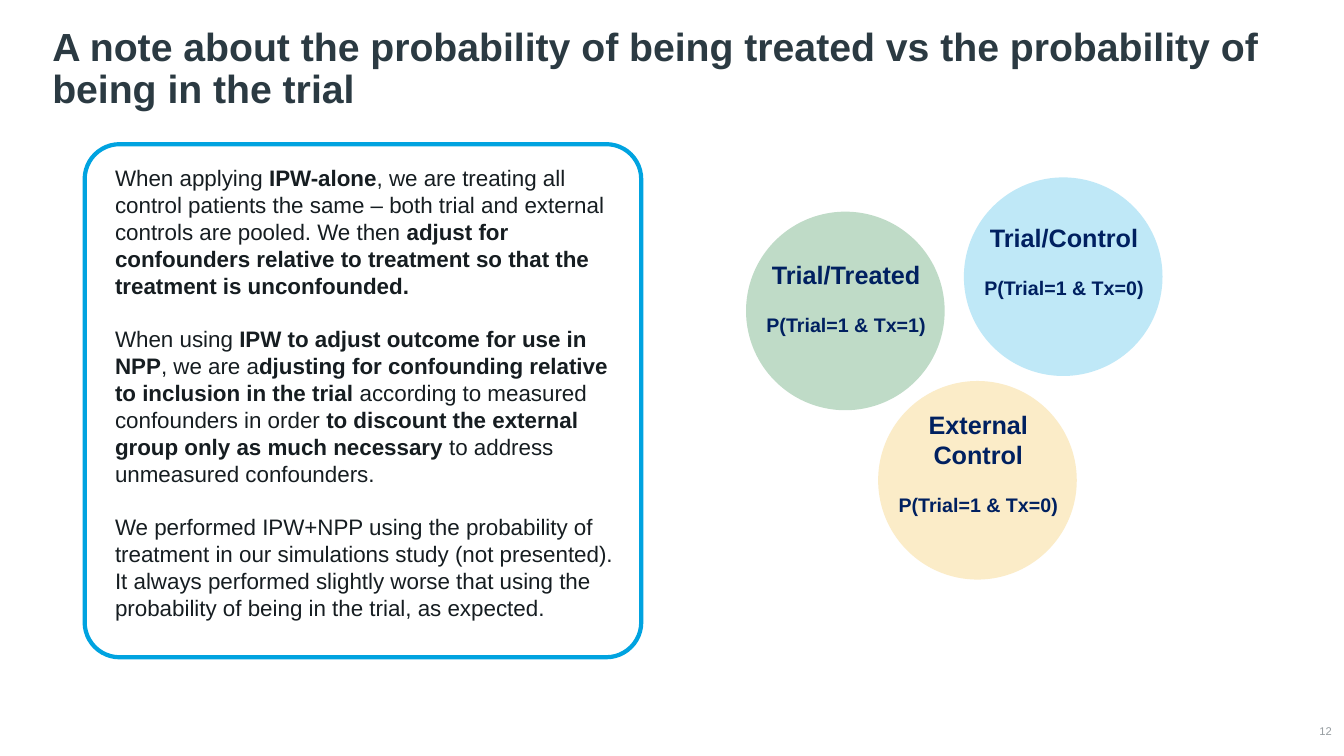
import pptx
import pptx.util
import pptx.dml.color
import pptx.enum.shapes
import pptx.enum.text
import pptx.oxml.ns
from lxml import etree

Inches, Pt = pptx.util.Inches, pptx.util.Pt
RGBColor = pptx.dml.color.RGBColor
SHAPE = pptx.enum.shapes.MSO_SHAPE
ALIGN = pptx.enum.text.PP_ALIGN
ANCHOR = pptx.enum.text.MSO_ANCHOR

SLATE = RGBColor(0x2B, 0x3A, 0x42)
INK = RGBColor(0x16, 0x1D, 0x21)
GREY = RGBColor(0x95, 0x9C, 0xA0)
NAVY = RGBColor(0x00, 0x20, 0x60)
WHITE = RGBColor(0xFF, 0xFF, 0xFF)
BORDER_BLUE = RGBColor(0x00, 0xA3, 0xE0)
GREEN = RGBColor(0x02, 0x71, 0x23)
SKY = RGBColor(0xBF, 0xE8, 0xF7)
CREAM = RGBColor(0xFB, 0xEC, 0xC8)

SLIDE_W, SLIDE_H = Inches(13.33), Inches(7.5)
CIRCLE_W, CIRCLE_H = 14.78, 26.27
LABEL_W, LABEL_H = 12.9, 15.73

# Group name, probability, fill, opacity, circle left and top, label drop
GROUPS = [
    ("Trial/Treated", "P(Trial=1 & Tx=1)", GREEN, 25, 55.51, 28.0, 6.27),
    ("Trial/Control", "P(Trial=1 & Tx=0)", SKY, 100, 71.72, 23.47, 6.0),
    ("External Control", "P(Trial=1 & Tx=0)", CREAM, 100, 65.34, 50.4, 3.73),
]

# Each paragraph alternates regular and bold wording
NOTES = [
    ["When applying ", "IPW-alone",
     ", we are treating all control patients the same – both trial and "
     "external controls are pooled. We then ",
     "adjust for confounders relative to treatment so that the treatment "
     "is unconfounded."],
    ["When using ", "IPW to adjust outcome for use in NPP", ", we are a",
     "djusting for confounding relative to inclusion in the trial ",
     "according to measured confounders in order ",
     "to discount the external group only as much necessary",
     " to address unmeasured confounders."],
    ["We performed IPW+NPP using the probability of treatment in our "
     "simulations study (not presented). It always performed slightly worse "
     "that using the probability of being in the trial, as expected."],
]


def area(left, top, width, height):
    """Turn percentages of the slide into a position and a size."""
    return (int(SLIDE_W * left / 100), int(SLIDE_H * top / 100),
            int(SLIDE_W * width / 100), int(SLIDE_H * height / 100))


def style(run, size, color, bold=False):
    run.font.name = "Arial"
    run.font.size = Pt(size)
    run.font.bold = bold
    run.font.color.rgb = color


def set_frame(frame, insets, anchor=ANCHOR.TOP):
    frame.word_wrap = True
    frame.vertical_anchor = anchor
    (frame.margin_left, frame.margin_top,
     frame.margin_right, frame.margin_bottom) = map(Inches, insets)


def add_line_of_text(frame, pieces, size, color, bolds, align, gap=0):
    """Fill the first paragraph, or append one that follows a gap."""
    paragraph = frame.paragraphs[0]
    if paragraph.runs:
        paragraph = frame.add_paragraph()
        paragraph.space_before = Pt(gap)
    paragraph.alignment = align
    for piece, bold in zip(pieces, bolds):
        run = paragraph.add_run()
        run.text = piece
        style(run, size, color, bold)
    return paragraph


def add_text(slide, place, insets, anchor=ANCHOR.TOP):
    frame = slide.shapes.add_textbox(*area(*place)).text_frame
    set_frame(frame, insets, anchor)
    return frame


def add_filled(slide, preset, place, fill, opacity=100):
    shape = slide.shapes.add_shape(preset, *area(*place))
    shape.shadow.inherit = False
    shape.fill.solid()
    shape.fill.fore_color.rgb = fill
    shape.line.fill.background()
    if opacity < 100:
        color = shape.fill._xPr.find(".//" + pptx.oxml.ns.qn("a:srgbClr"))
        alpha = etree.SubElement(color, pptx.oxml.ns.qn("a:alpha"))
        alpha.set("val", str(opacity * 1000))
    return shape


def add_group_label(slide, name, probability, left, top):
    frame = add_text(slide, (left, top, LABEL_W, LABEL_H), (0.04, 0, 0.04, 0))
    add_line_of_text(frame, [name], 18, NAVY, [True], ALIGN.CENTER)
    add_line_of_text(frame, [probability], 14, NAVY, [True], ALIGN.CENTER, 16.5)


def add_notes_panel(slide):
    panel = add_filled(slide, SHAPE.ROUNDED_RECTANGLE,
                       (6.3, 19.07, 41.41, 67.87), WHITE)
    panel.adjustments[0] = 0.068
    panel.line.color.rgb = BORDER_BLUE
    panel.line.width = Pt(3)
    set_frame(panel.text_frame, (0.2, 0.1, 0.1, 0.05))
    for pieces in NOTES:
        bolds = [index % 2 == 1 for index in range(len(pieces))]
        add_line_of_text(panel.text_frame, pieces, 16, INK, bolds,
                         ALIGN.LEFT, 19)


def main():
    deck = pptx.Presentation()
    deck.slide_width, deck.slide_height = SLIDE_W, SLIDE_H
    slide = deck.slides.add_slide(deck.slide_layouts[6])

    # Slide number
    number = add_text(slide, (96.17, 95.47, 2.93, 2.53), (0, 0, 0, 0),
                      ANCHOR.MIDDLE)
    add_line_of_text(number, ["12"], 8, GREY, [False], ALIGN.RIGHT)

    # Title
    title = add_text(slide, (3.15, 4.27, 93.02, 11.2), (0.1, 0.05, 0.1, 0.05),
                     ANCHOR.BOTTOM)
    heading = add_line_of_text(
        title, ["A note about the probability of being treated vs the "
                "probability of being in the trial"],
        28, SLATE, [True], ALIGN.LEFT)
    heading.line_spacing = 0.9

    # Patient groups
    for name, probability, fill, opacity, left, top, drop in GROUPS:
        add_filled(slide, SHAPE.OVAL, (left, top, CIRCLE_W, CIRCLE_H),
                   fill, opacity)
        add_group_label(slide, name, probability, left + 1, top + drop)

    # Explanation
    add_notes_panel(slide)

    deck.save("out.pptx")


if __name__ == "__main__":
    main()
